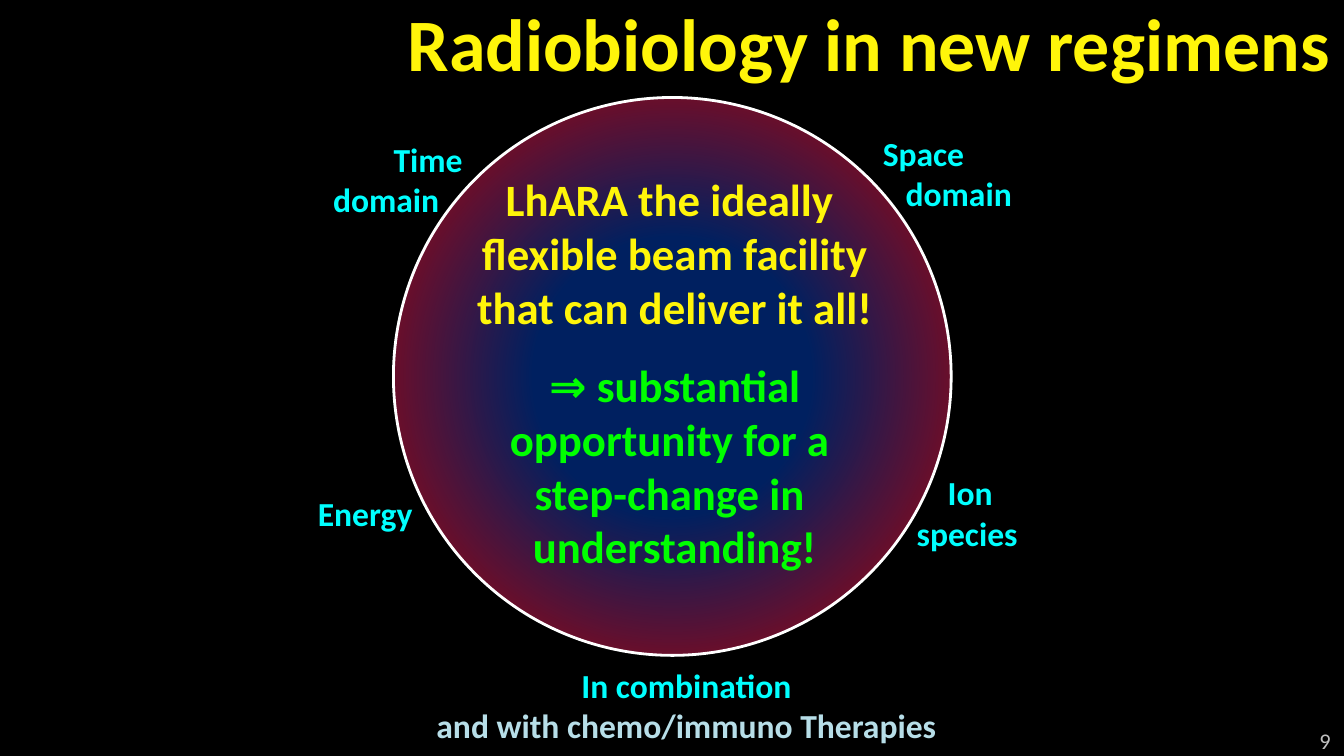
import pptx
import pptx.util
import pptx.dml.color
import pptx.enum.shapes
import pptx.enum.text
import pptx.oxml

WIDE = 10
HIGH = WIDE * 9 / 16
HUES = {
    "back": "000000", "title": "FFF50A", "goal": "00FF00", "label": "00FFFF",
    "soft": "B7DEE8", "page": "BFBFBF", "core": "002060", "edge": "C00000",
    "rim": "4B7EBC", "ring": "FFFFFF",
}
SIDES = {
    "left": pptx.enum.text.PP_ALIGN.LEFT,
    "mid": pptx.enum.text.PP_ALIGN.CENTER,
    "right": pptx.enum.text.PP_ALIGN.RIGHT,
}
MIDDLE = pptx.enum.text.MSO_ANCHOR.MIDDLE
DISC = (29.27, 12.9, 41.5, 73.8)
LABELS = [
    ((23.8, 17.45, 12, 12.6), [("Time", 0.45), ("domain", 0)]),
    ((64.7, 16.7, 12, 12.6), [("Space", 0), ("domain", 0.17)]),
    ((22.67, 64.35, 10, 7.1), [("Energy", 0)]),
    ((67.23, 61.6, 10, 12.6), [("Ion", 0.23), ("species", 0)]),
]


def tint(name):
    return pptx.dml.color.RGBColor.from_string(HUES[name])


def area(box):
    return [pptx.util.Inches(part * side / 100)
            for part, side in zip(box, (WIDE, HIGH, WIDE, HIGH))]


def write(para, text, size=18, hue="label", bold=True, side="left",
          gap=0, dent=0):
    para.text = text
    para.alignment = SIDES[side]
    para.space_before = pptx.util.Pt(gap)
    if dent:
        para._p.get_or_add_pPr().set("marL", str(pptx.util.Inches(dent)))
    for run in para.runs:
        run.font.name = "Calibri"
        run.font.size = pptx.util.Pt(size)
        run.font.bold = bold
        run.font.color.rgb = tint(hue)


def add_text(slide, box, items):
    frame = slide.shapes.add_textbox(*area(box)).text_frame
    frame.word_wrap = True
    for place, (text, form) in enumerate(items):
        para = frame.add_paragraph() if place else frame.paragraphs[0]
        write(para, text, **form)
    return frame


def add_title(slide, text):
    title = slide.shapes.title
    title.left, title.top, title.width, title.height = area((0, 0, 100, 11))
    frame = title.text_frame
    frame.auto_size = pptx.enum.text.MSO_AUTO_SIZE.NONE
    frame.vertical_anchor = MIDDLE
    write(frame.paragraphs[0], text, size=39.6, hue="title", side="right")


def glow(shape):
    stops = "".join(
        f'<a:gs pos="{pos * 1000}"><a:srgbClr val="{HUES[name]}"/></a:gs>'
        for pos, name in ((0, "core"), (35, "core"), (100, "edge")))
    fill = pptx.oxml.parse_xml(
        '<a:gradFill xmlns:a="http://schemas.openxmlformats.org/drawingml/2006/main"'
        f' rotWithShape="1"><a:gsLst>{stops}</a:gsLst><a:path path="circle">'
        '<a:fillToRect l="50000" t="50000" r="50000" b="50000"/>'
        '</a:path></a:gradFill>')
    shape.fill.solid()
    solid = shape._element.spPr.find(pptx.oxml.ns.qn("a:solidFill"))
    solid.getparent().replace(solid, fill)


def add_disc(slide, hue, width):
    oval = pptx.enum.shapes.MSO_SHAPE.OVAL
    disc = slide.shapes.add_shape(oval, *area(DISC))
    disc.shadow.inherit = False
    disc.fill.background()
    disc.line.color.rgb = tint(hue)
    disc.line.width = pptx.util.Pt(width)
    return disc


def main():
    deck = pptx.Presentation()
    deck.slide_width = pptx.util.Inches(WIDE)
    deck.slide_height = pptx.util.Inches(HIGH)
    slide = deck.slides.add_slide(deck.slide_layouts[5])
    slide.background.fill.solid()
    slide.background.fill.fore_color.rgb = tint("back")

    glow(add_disc(slide, "rim", 0.75))
    add_title(slide, "Radiobiology in new regimens")
    page = add_text(slide, (76.7, 95.9, 23.3, 4.1), [
        ("9", dict(size=12, hue="page", bold=False, side="right"))])
    page.vertical_anchor = MIDDLE
    add_text(slide, (33.85, 21.9, 32.7, 55.3), [
        ("LhARA the ideally \nflexible beam facility\nthat can deliver it all!",
         dict(size=24, hue="title", side="mid")),
        ("⇒ substantial\nopportunity for a \nstep-change in \nunderstanding!",
         dict(size=24, hue="goal", side="mid", gap=13)),
    ])
    add_disc(slide, "ring", 1.5)
    for box, lines in LABELS:
        add_text(slide, box, [(text, dict(dent=dent)) for text, dent in lines])
    add_text(slide, (30.83, 87.1, 40.5, 12.6), [
        ("In combination", dict(side="mid")),
        ("and with chemo/immuno Therapies", dict(hue="soft", side="mid")),
    ])
    deck.save("out.pptx")


if __name__ == "__main__":
    main()
